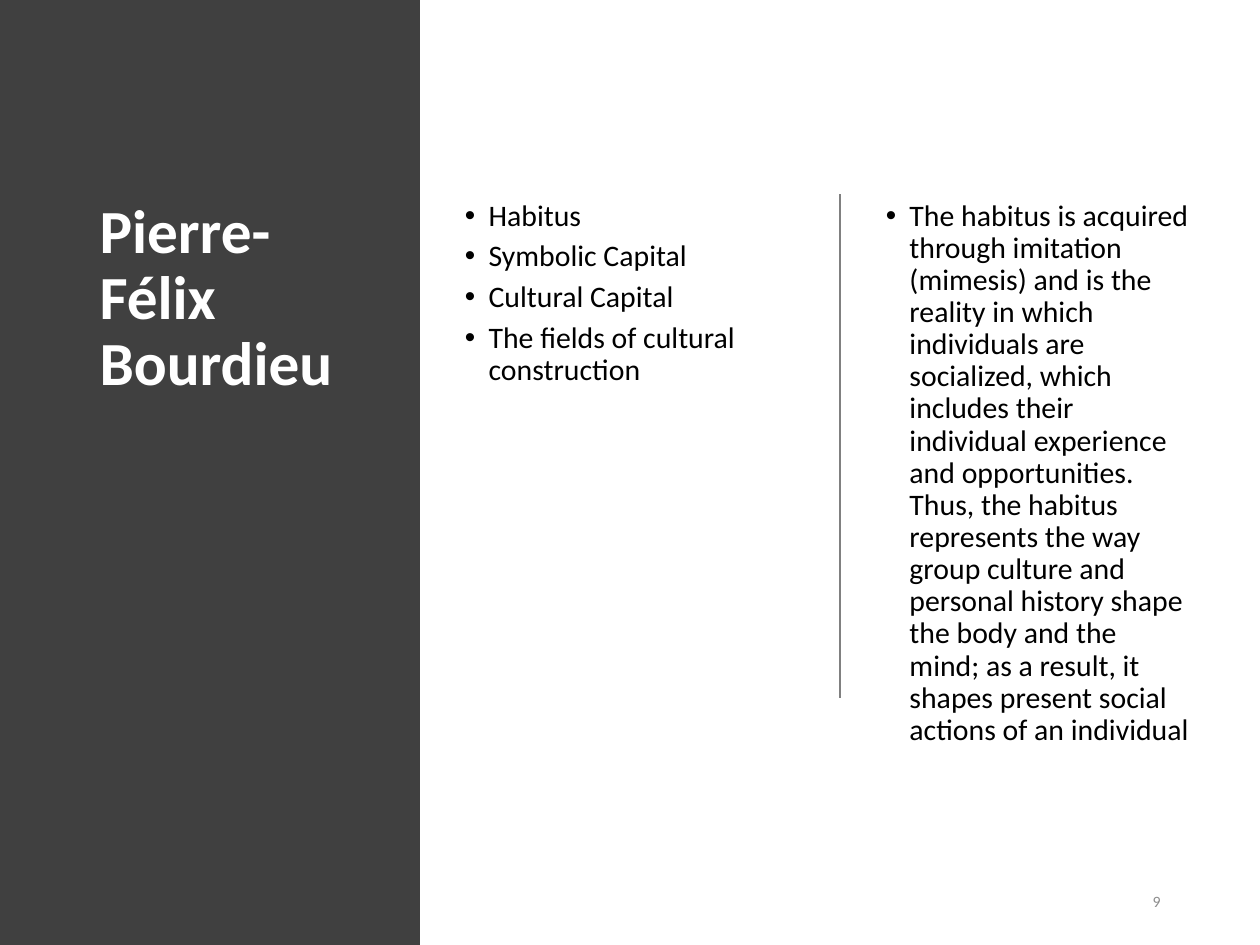
"""Build the Pierre-Félix Bourdieu slide with a dark title panel and two lists."""
from pptx import Presentation
from pptx.dml.color import RGBColor
from pptx.enum.shapes import MSO_CONNECTOR as Connector, MSO_SHAPE as Shape
from pptx.enum.text import MSO_ANCHOR as Anchor, MSO_AUTO_SIZE as AutoSize, PP_ALIGN as Align
from pptx.oxml.ns import qn
from pptx.util import Pt

PANEL = RGBColor(0x40, 0x40, 0x40)
WHITE = RGBColor(0xFF, 0xFF, 0xFF)
BLACK = RGBColor(0, 0, 0)
RULE = RGBColor(0x80, 0x80, 0x80)
NUMBER = RGBColor(0x8C, 0x8C, 0x8C)
TOP, HEIGHT = 110.9, 343.4
BULLET_INDENT = Pt(13.5)

CONCEPTS = ["Habitus", "Symbolic Capital", "Cultural Capital", "The fields of cultural construction"]
DEFINITION = [
    "The habitus is acquired through imitation (mimesis) and is the reality in which "
    "individuals are socialized, which includes their individual experience and "
    "opportunities. Thus, the habitus represents the way group culture and personal "
    "history shape the body and the mind; as a result, it shapes present social "
    "actions of an individual"
]


def apply(target, values):
    for name, value in values.items():
        setattr(target, name, value)


def fill_text(box, place, lines, font, color, layout, anchor=Anchor.TOP):
    apply(box, dict(zip(("left", "top", "width", "height"), map(Pt, place))))
    frame = box.text_frame
    apply(frame, {"text": "\n".join(lines), "word_wrap": True,
                  "auto_size": AutoSize.NONE, "vertical_anchor": anchor})
    for para in frame.paragraphs:
        apply(para, layout)
        for span in para.runs:
            apply(span.font, {"name": "Calibri", **font})
            span.font.color.rgb = color


deck = Presentation()
deck.slide_width, deck.slide_height = Pt(720), Pt(540)
page = deck.slides.add_slide(deck.slide_layouts[3])
title, concepts, definition = list(page.placeholders)[:3]

panel = page.shapes.add_shape(Shape.RECTANGLE, 0, 0, Pt(240), Pt(540))
panel.shadow.inherit = False
panel.fill.solid()
panel.fill.fore_color.rgb = PANEL
panel.line.fill.background()
title.element.addprevious(panel.element)

fill_text(title, (49.7, TOP, 171.4, HEIGHT), ["Pierre-Félix Bourdieu"],
          {"size": Pt(35), "bold": True}, WHITE,
          {"alignment": Align.LEFT, "line_spacing": 0.9})

for box, left, width, lines, gap in (
    (concepts, 258.5, 202.3, CONCEPTS, 5),
    (definition, 499, 188.6, DEFINITION, 7.5),
):
    fill_text(box, (left, TOP, width, HEIGHT), lines, {"size": Pt(17)}, BLACK,
              {"line_spacing": 0.9, "space_before": Pt(gap)})
    for para in box.text_frame.paragraphs:
        properties = para._p.get_or_add_pPr()
        properties.set("marL", str(BULLET_INDENT))
        properties.set("indent", str(-BULLET_INDENT))
        properties.makeelement(qn("a:buChar"), {"char": "•"})
        properties.append(properties.makeelement(qn("a:buChar"), {"char": "•"}))

divider = page.shapes.add_connector(Connector.STRAIGHT, Pt(480), Pt(TOP), Pt(480), Pt(TOP + 288))
divider.line.color.rgb = RULE
divider.line.width = Pt(1)
effects = divider.element.spPr
effects.append(effects.makeelement(qn("a:effectLst"), {}))
definition.element.addprevious(divider.element)

number = page.shapes.add_textbox(0, 0, Pt(126.7), Pt(28.8))
fill_text(number, (543.6, 500.4, 126.7, 28.8), ["9"], {"size": Pt(9)}, NUMBER,
          {"alignment": Align.RIGHT, "space_after": Pt(6)}, Anchor.MIDDLE)

deck.save("out.pptx")
